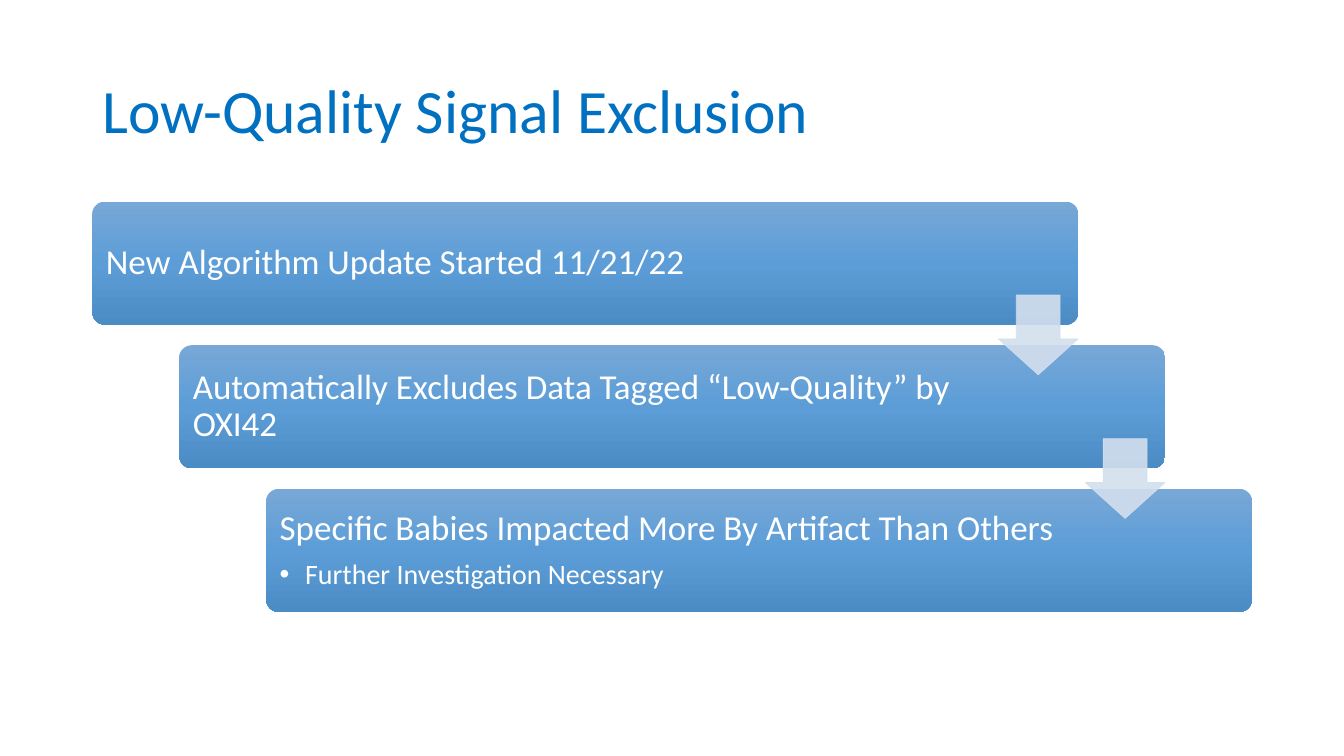
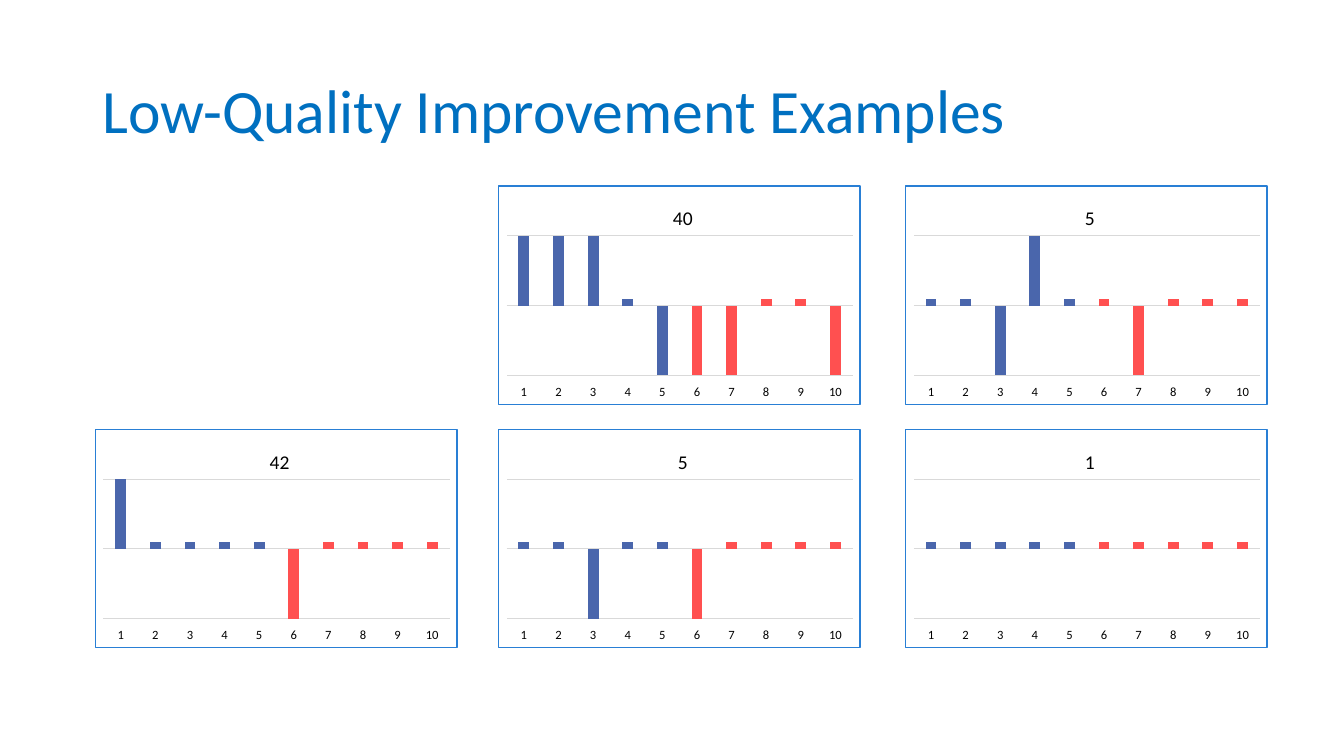
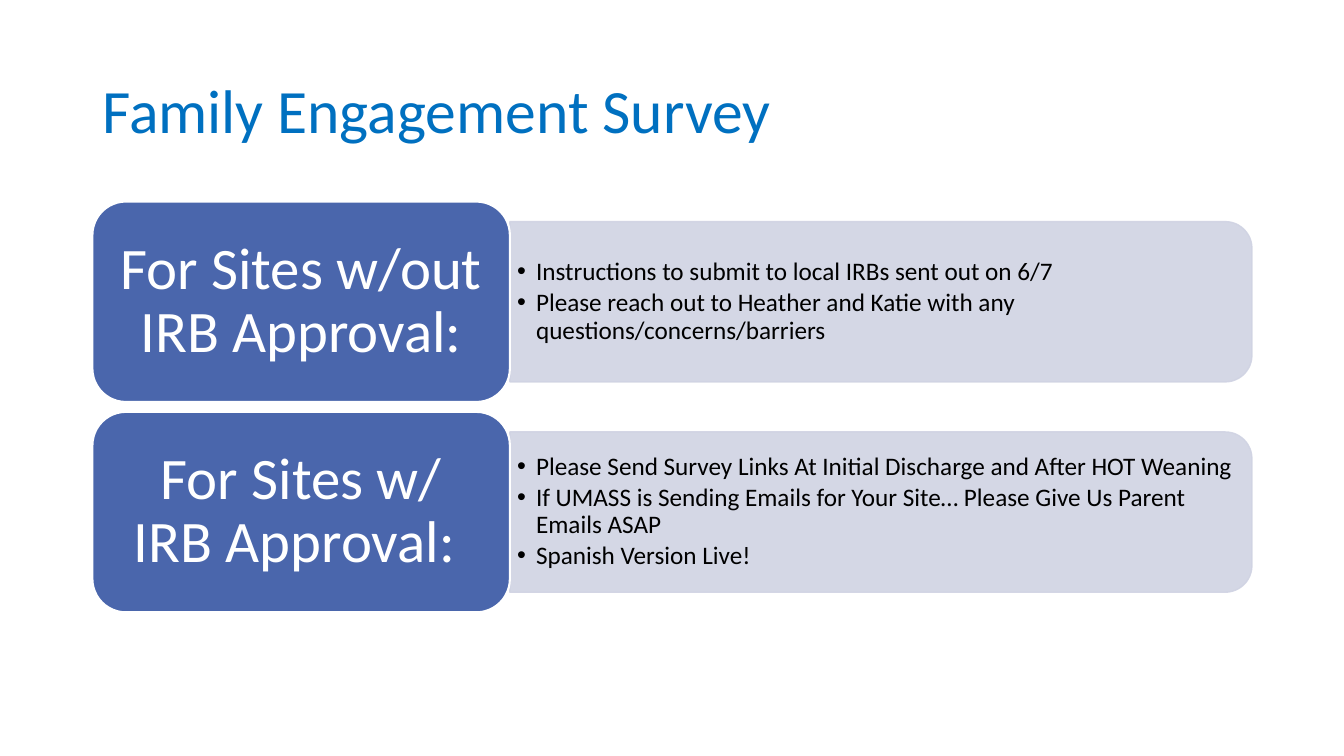
from dataclasses import dataclass

from lxml import etree
from pptx import Presentation
from pptx.chart.data import CategoryChartData
from pptx.dml.color import RGBColor
from pptx.enum.chart import XL_CHART_TYPE, XL_TICK_LABEL_POSITION, XL_TICK_MARK
from pptx.enum.shapes import MSO_SHAPE
from pptx.enum.text import MSO_ANCHOR, PP_ALIGN
from pptx.oxml.ns import qn
from pptx.util import Cm, Pt

ROUNDED = MSO_SHAPE.ROUNDED_RECTANGLE
ROUNDED_END = MSO_SHAPE.ROUND_2_SAME_RECTANGLE
DOWN_ARROW = MSO_SHAPE.DOWN_ARROW
COLUMNS = XL_CHART_TYPE.COLUMN_CLUSTERED
LABELS_LOW = XL_TICK_LABEL_POSITION.LOW
NO_TICKS = XL_TICK_MARK.NONE
MIDDLE = MSO_ANCHOR.MIDDLE
LEFT = PP_ALIGN.LEFT
CENTER = PP_ALIGN.CENTER


@dataclass(frozen=True)
class Theme:
    font: str = "Calibri"
    title: str = "0070C0"
    white: str = "FFFFFF"
    black: str = "000000"
    indigo: str = "4A66AC"
    panel: str = "D0D3E3"
    arrow: str = "D3DFEE"
    red: str = "FF5050"
    grid: str = "D9D9D9"
    border: str = "297FD5"
    step_gradient: tuple = ((0, "77A8D7"), (50, "5C9DD7"), (100, "4C8CC5"))
    title_size: int = 44
    label_size: int = 42
    step_size: int = 25
    detail_size: int = 20
    bullet_size: int = 18
    chart_title_size: int = 14
    axis_size: int = 9
    line_spacing: float = 0.9


THEME = Theme()


def rgb(value):
    return RGBColor.from_string(value)


def paint(shape, color, line=None, width=0, opacity=100):
    shape.shadow.inherit = False
    shape.fill.solid()
    shape.fill.fore_color.rgb = rgb(color)
    if line:
        shape.line.color.rgb = rgb(line)
        shape.line.width = Pt(width)
    else:
        shape.line.fill.background()
    if opacity < 100:
        for node in shape._element.spPr.iter(qn("a:srgbClr")):
            etree.SubElement(node, qn("a:alpha"), val=str(opacity * 1000))


def paint_gradient(shape, stops):
    shape.shadow.inherit = False
    shape.line.fill.background()
    shape.fill.gradient()
    shape.fill.gradient_angle = 270
    stop_list = shape._element.spPr.find(qn("a:gradFill")).find(qn("a:gsLst"))
    for node in list(stop_list):
        stop_list.remove(node)
    for place, color in stops:
        stop = etree.SubElement(stop_list, qn("a:gs"), pos=str(place * 1000))
        etree.SubElement(stop, qn("a:srgbClr"), val=color)


def set_frame(shape, margins):
    frame = shape.text_frame
    frame.word_wrap = True
    frame.vertical_anchor = MIDDLE
    frame.margin_left, frame.margin_top, frame.margin_right, frame.margin_bottom = (
        Cm(margin) for margin in margins)
    return frame


def format_para(para, size, color, after=0, align=LEFT, bullet_indent=0):
    para.alignment = align
    para.line_spacing = THEME.line_spacing
    para.space_before = Pt(0)
    para.space_after = Pt(size * after)
    if bullet_indent:
        properties = para._p.get_or_add_pPr()
        properties.set("marL", str(Cm(bullet_indent)))
        properties.set("indent", str(-Cm(bullet_indent)))
        etree.SubElement(properties, qn("a:buFont"), typeface="Arial")
        etree.SubElement(properties, qn("a:buChar"), char="•")
    for span in para.runs:
        span.font.name = THEME.font
        span.font.size = Pt(size)
        span.font.color.rgb = rgb(color)


def add_page(deck, title):
    page = deck.slides.add_slide(deck.slide_layouts[6])
    box = page.shapes.add_textbox(Cm(2.33), Cm(1.02), Cm(29.21), Cm(3.68))
    frame = set_frame(box, (0.25, 0.13, 0.25, 0.13))
    frame.text = title
    format_para(frame.paragraphs[0], THEME.title_size, THEME.title)
    return page


def add_step(page, left, top, width, height, text, details):
    card = page.shapes.add_shape(ROUNDED, Cm(left), Cm(top), Cm(width), Cm(height))
    card.adjustments[0] = 0.1
    paint_gradient(card, THEME.step_gradient)
    frame = set_frame(card, (0.25, 0.25, 4.46, 0.25))
    frame.text = text
    format_para(frame.paragraphs[0], THEME.step_size, THEME.white, 0.35)
    for detail in details:
        para = frame.add_paragraph()
        para.text = detail
        format_para(para, THEME.detail_size, THEME.white, 0.15, bullet_indent=0.64)


def add_staircase(page, left, top, steps):
    width, height, shift, gap, arrow_size = 24.84, 3.1, 2.19, 0.52, 2.01
    pitch = height + gap
    for index, (text, details) in enumerate(steps):
        add_step(page, left + index * shift, top + index * pitch, width, height, text, details)
    for index in range(len(steps) - 1):
        arrow_left = left + index * shift + width - arrow_size
        arrow_top = top + index * pitch + height + (gap - arrow_size) / 2
        arrow = page.shapes.add_shape(
            DOWN_ARROW, Cm(arrow_left), Cm(arrow_top), Cm(arrow_size), Cm(arrow_size))
        arrow.adjustments[0] = 0.55
        arrow.adjustments[1] = 0.45
        paint(arrow, THEME.arrow, THEME.arrow, 0.5, opacity=90)


def set_layout(parent, position, **edges):
    layout = parent.find(qn("c:layout"))
    if layout is None:
        layout = etree.Element(qn("c:layout"))
        parent.insert(position, layout)
    manual = etree.SubElement(layout, qn("c:manualLayout"))
    if "w" in edges:
        etree.SubElement(manual, qn("c:layoutTarget"), val="inner")
    for axis in ("x", "y"):
        etree.SubElement(manual, qn(f"c:{axis}Mode"), val="edge")
    for name, value in edges.items():
        etree.SubElement(manual, qn(f"c:{name}"), val=f"{value:.3f}")


def frame_chart(chart):
    properties = etree.Element(qn("c:spPr"))
    fill = etree.SubElement(properties, qn("a:solidFill"))
    etree.SubElement(fill, qn("a:srgbClr"), val=THEME.white)
    line = etree.SubElement(properties, qn("a:ln"), w=str(Pt(1)))
    stroke = etree.SubElement(line, qn("a:solidFill"))
    etree.SubElement(stroke, qn("a:srgbClr"), val=THEME.border)
    chart._chartSpace.find(qn("c:txPr")).addprevious(properties)


def style_font(font, size):
    font.name = THEME.font
    font.size = Pt(size)
    font.bold = False
    font.color.rgb = rgb(THEME.black)


def style_rule(line):
    line.color.rgb = rgb(THEME.grid)
    line.width = Pt(0.75)


def add_signal_chart(page, left, top, width, height, title, limit, values):
    data = CategoryChartData()
    data.categories = [str(number) for number in range(1, len(values) + 1)]
    data.add_series("Series 1", values)
    chart = page.shapes.add_chart(
        COLUMNS, Cm(left), Cm(top), Cm(width), Cm(height), data).chart
    style_font(chart.font, 10)
    frame_chart(chart)
    chart.has_legend = False
    chart.has_title = True
    chart.chart_title.text_frame.text = title
    style_font(chart.chart_title.text_frame.paragraphs[0].runs[0].font,
               THEME.chart_title_size)
    set_layout(chart.chart_title._element, 1, x=0.5 - 0.0275 * len(title) / 2, y=0.07)
    set_layout(chart._chartSpace.chart.plotArea, 0, x=0.022, y=0.229, w=0.958, h=0.638)

    numbers = chart.category_axis
    numbers.tick_label_position = LABELS_LOW
    numbers.major_tick_mark = NO_TICKS
    numbers.minor_tick_mark = NO_TICKS
    style_font(numbers.tick_labels.font, THEME.axis_size)
    style_rule(numbers.format.line)

    scale = chart.value_axis
    scale.minimum_scale, scale.maximum_scale, scale.major_unit = -limit, limit, limit
    scale.has_major_gridlines = True
    style_rule(scale.major_gridlines.format.line)
    scale.visible = False

    plot = chart.plots[0]
    plot.vary_by_categories = False
    plot.gap_width = 219
    plot.overlap = -27
    series = plot.series[0]
    series.invert_if_negative = False
    series.format.fill.solid()
    series.format.fill.fore_color.rgb = rgb(THEME.indigo)
    for index in range(len(values) // 2, len(values)):
        fill = series.points[index].format.fill
        fill.solid()
        fill.fore_color.rgb = rgb(THEME.red)


def add_chart_grid(page, charts):
    lefts, tops = (2.39, 12.55, 22.81), (4.67, 10.8)
    for row, column, title, limit, values in charts:
        add_signal_chart(page, lefts[column], tops[row], 9.14, 5.54, title, limit, values)


def add_survey_row(page, left, top, heading, bullets):
    label_width, label_height, panel_width, panel_height = 10.52, 5.05, 18.7, 4.04
    panel_left = left + label_width
    middle = top + label_height / 2
    panel = page.shapes.add_shape(
        ROUNDED_END, Cm(panel_left + (panel_width - panel_height) / 2),
        Cm(middle - panel_width / 2), Cm(panel_height), Cm(panel_width))
    panel.rotation = 90
    paint(panel, THEME.panel, THEME.panel, 1, opacity=90)

    text_height = 3.63
    box = page.shapes.add_textbox(
        Cm(panel_left), Cm(middle - text_height / 2), Cm(18.49), Cm(text_height))
    frame = set_frame(box, (0.18, 0.1, 0.18, 0.1))
    frame.text = "\n".join(bullets)
    for para in frame.paragraphs:
        format_para(para, THEME.bullet_size, THEME.black, 0.15, bullet_indent=0.48)

    label = page.shapes.add_shape(
        ROUNDED, Cm(left), Cm(top), Cm(label_width), Cm(label_height))
    paint(label, THEME.indigo, THEME.white, 1.5)
    frame = set_frame(label, (0.43, 0.23, 0.43, 0.23))
    frame.text = heading
    format_para(frame.paragraphs[0], THEME.label_size, THEME.white, 0.35, CENTER)


def add_survey_rows(page, left, top, rows):
    for index, (heading, bullets) in enumerate(rows):
        add_survey_row(page, left, top + index * 5.3, heading, bullets)


STEPS = (
    ("New Algorithm Update Started 11/21/22", ()),
    ("Automatically Excludes Data Tagged “Low-Quality” by OXI42", ()),
    ("Specific Babies Impacted More By Artifact Than Others",
     ("Further Investigation Necessary",)),
)

CHARTS = (
    (0, 1, "40", 100, (100, 100, 100, 10, -100, -100, -100, 10, 10, -100)),
    (0, 2, "5", 100, (10, 10, -100, 100, 10, 10, -100, 10, 10, 10)),
    (1, 0, "42", 100, (100, 10, 10, 10, 10, -100, 10, 10, 10, 10)),
    (1, 1, "5", 100, (10, 10, -100, 10, 10, -100, 10, 10, 10, 10)),
    (1, 2, "1", 1000, (100,) * 10),
)

SURVEY_ROWS = (
    ("For Sites w/out IRB Approval:",
     ("Instructions to submit to local IRBs sent out on 6/7",
      "Please reach out to Heather and Katie with any questions/concerns/barriers")),
    ("For Sites w/ IRB Approval: ",
     ("Please Send Survey Links At Initial Discharge and After HOT Weaning",
      "If UMASS is Sending Emails for Your Site… Please Give Us Parent Emails ASAP",
      "Spanish Version Live!")),
)


def main():
    deck = Presentation()
    deck.slide_width, deck.slide_height = Cm(33.87), Cm(19.05)
    add_staircase(add_page(deck, "Low-Quality Signal Exclusion"), 2.33, 5.08, STEPS)
    add_chart_grid(add_page(deck, "Low-Quality Improvement Examples"), CHARTS)
    add_survey_rows(add_page(deck, "Family Engagement Survey"), 2.33, 5.08, SURVEY_ROWS)
    deck.save("out.pptx")


if __name__ == "__main__":
    main()
